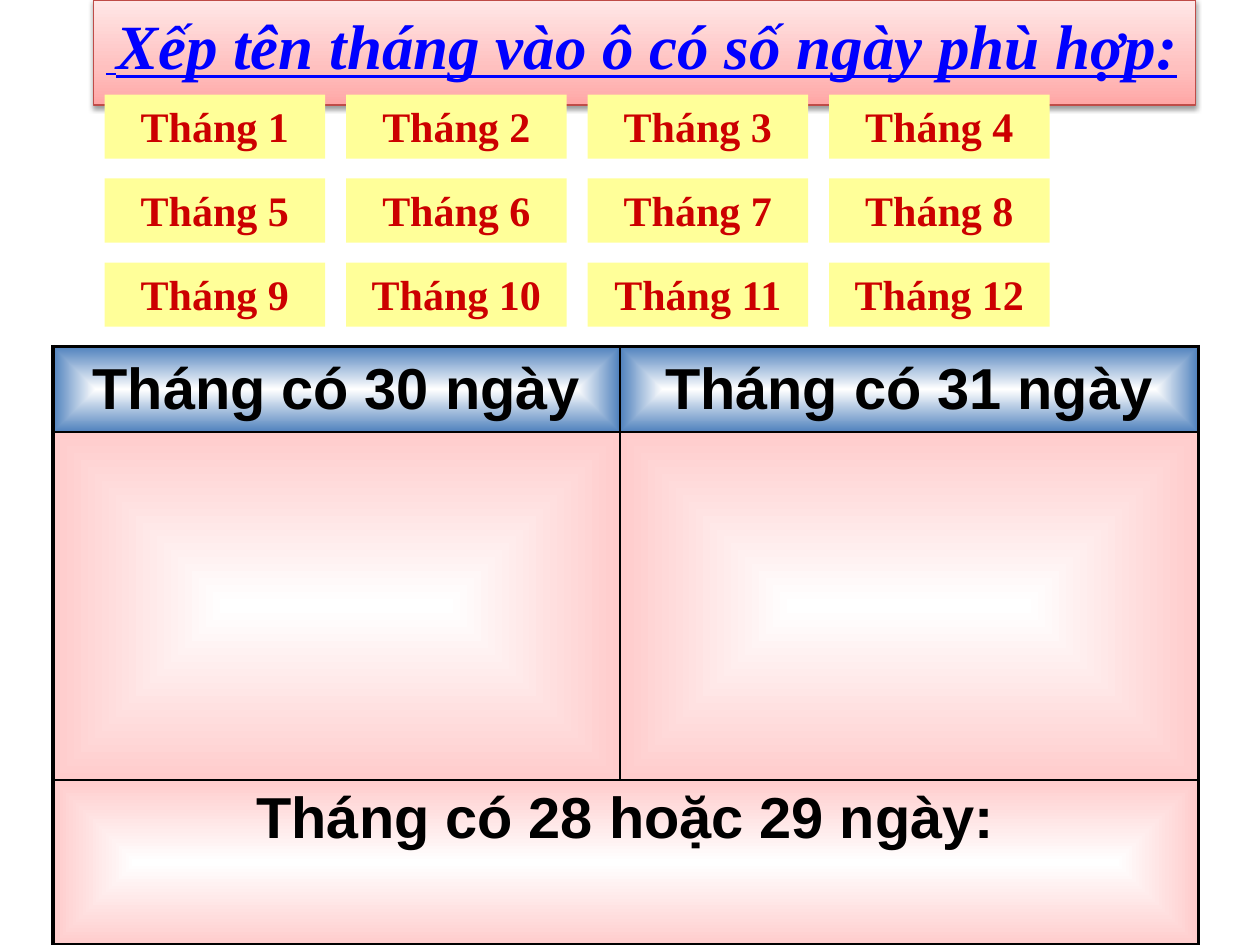
from dataclasses import dataclass

from lxml import etree
from pptx import Presentation
from pptx import util as u
from pptx.dml.color import RGBColor
from pptx.enum import shapes, text
from pptx.oxml.ns import qn


@dataclass(frozen=True)
class Theme:
    """Colours, fonts and type sizes of the slide."""
    serif: str = "Times New Roman"
    sans: str = "Arial"
    blue: str = "0000FF"
    red: str = "CC0000"
    black: str = "000000"
    yellow: str = "FFFF99"
    title_line: str = "BF4C48"
    title_stops: tuple = ((0, "FFA6A5"), (35, "FFC0BF"), (100, "FFE7E7"))
    head_stops: tuple = ((0, "FFFFFF"), (100, "4F81BD"))
    body_stops: tuple = ((0, "FFFFFF"), (100, "FFCCCC"))
    title_size: int = 36
    head_size: int = 33
    label_size: int = 24
    outer: float = 2.25
    inner: float = 1


def sub(parent, tag, **attrs):
    """Append a DrawingML child with the given attributes."""
    return etree.SubElement(parent, qn(f"a:{tag}"), {k: str(v) for k, v in attrs.items()})


def add_text(p, content, *, size, font, color, italic=False, underline=False,
             align=text.PP_ALIGN.CENTER, before=0):
    """Add a bold run to a paragraph, with space before in percent of a line."""
    p.alignment = align
    if before:
        p.space_before = u.Pt(0)
        spacing = p._p.pPr.find(qn("a:spcBef"))
        spacing.clear()
        sub(spacing, "spcPct", val=before * 1000)
    r = p.add_run()
    r.text = content
    f = r.font
    f.size, f.name, f.bold = u.Pt(size), font, True
    f.italic, f.underline = italic, underline
    f.color.rgb = RGBColor.from_string(color)


def fill_gradient(fill, props, stops, angle=None):
    """Fill with colour stops, linear at an angle or else from the centre."""
    fill.gradient()
    grad = props.find(qn("a:gradFill"))
    grad.clear()
    grad.set("rotWithShape", "1")
    stop_list = sub(grad, "gsLst")
    for pos, color in stops:
        sub(sub(stop_list, "gs", pos=pos * 1000), "srgbClr", val=color)
    if angle is None:
        sub(sub(grad, "path", path="shape"), "fillToRect", l=50000, t=50000, r=50000, b=50000)
    else:
        sub(grad, "lin", ang=angle * 60000, scaled=1)


class Board:
    """Holds the theme and the current slide."""

    def __init__(self, slide, theme):
        """Keep the slide and the theme."""
        self.s, self.t = slide, theme

    def title(self, content, left, top, width, height):
        """Format the title placeholder as a shaded banner."""
        t, sp = self.t, self.s.shapes.title
        sp.left, sp.top = u.Inches(left), u.Inches(top)
        sp.width, sp.height = u.Inches(width), u.Inches(height)
        props = sp._element.spPr
        fill_gradient(sp.fill, props, t.title_stops, angle=270)
        sp.line.color.rgb = RGBColor.from_string(t.title_line)
        sp.line.width = u.Pt(0.75)
        shadow = sub(sub(props, "effectLst"), "outerShdw", blurRad=u.Pt(3.1),
                     dist=u.Pt(1.6), dir=90 * 60000, rotWithShape=0)
        sub(sub(shadow, "srgbClr", val=t.black), "alpha", val=38000)
        tf = sp.text_frame
        tf.word_wrap = True
        tf.auto_size = text.MSO_AUTO_SIZE.SHAPE_TO_FIT_TEXT
        tf.vertical_anchor = text.MSO_ANCHOR.TOP
        for part, size in ((" ", t.label_size), (content, t.title_size)):
            add_text(tf.paragraphs[0], part, size=size, font=t.serif, color=t.blue,
                     italic=True, underline=True, align=text.PP_ALIGN.LEFT)

    def label(self, content, left, top, width, height):
        """Add a month card."""
        t = self.t
        sp = self.s.shapes.add_shape(shapes.MSO_SHAPE.RECTANGLE, u.Inches(left),
                                     u.Inches(top), u.Inches(width), u.Inches(height))
        sp.shadow.inherit = False
        sp.fill.solid()
        sp.fill.fore_color.rgb = RGBColor.from_string(t.yellow)
        sp.line.fill.background()
        tf = sp.text_frame
        tf.word_wrap = True
        tf.auto_size = text.MSO_AUTO_SIZE.SHAPE_TO_FIT_TEXT
        tf.vertical_anchor = text.MSO_ANCHOR.TOP
        add_text(tf.paragraphs[0], content, size=t.label_size, font=t.serif,
                 color=t.red, before=50)

    def borders(self, cell, edges):
        """Draw the left, right, top and bottom cell borders."""
        props = cell._tc.get_or_add_tcPr()
        for i, (side, is_outer) in enumerate(zip("LRTB", edges)):
            width = self.t.outer if is_outer else self.t.inner
            ln = sub(props, f"ln{side}", w=u.Pt(width))
            sub(sub(ln, "solidFill"), "srgbClr", val=self.t.black)
            props.insert(i, ln)

    def table(self, rows, left, top, widths, heights):
        """Add the sorting table, its last row merged across."""
        t = self.t
        last_row, last_col = len(heights) - 1, len(widths) - 1
        table = self.s.shapes.add_table(
            len(heights), len(widths), u.Inches(left), u.Inches(top),
            u.Inches(sum(widths)), u.Inches(sum(heights))).table
        table.first_row = table.horz_banding = False
        for col, width in zip(table.columns, widths):
            col.width = u.Inches(width)
        for row, height in zip(table.rows, heights):
            row.height = u.Inches(height)
        table.cell(last_row, 0).merge(table.cell(last_row, last_col))
        for i, row in enumerate(rows):
            for j, content in enumerate(row):
                cell = table.cell(i, j)
                stops = t.body_stops if i else t.head_stops
                fill_gradient(cell.fill, cell._tc.get_or_add_tcPr(), stops)
                is_right = j == last_col or cell.is_merge_origin
                self.borders(cell, (j == 0, is_right, i == 0, i == last_row))
                if i == 0:
                    cell.vertical_anchor = text.MSO_ANCHOR.MIDDLE
                if content:
                    add_text(cell.text_frame.paragraphs[0], content, size=t.head_size,
                             font=t.sans, color=t.black, before=20)


def main():
    """Build the month sorting slide."""
    prs = Presentation()
    prs.slide_width, prs.slide_height = u.Inches(10), u.Inches(7.5)
    board = Board(prs.slides.add_slide(prs.slide_layouts[5]), Theme())
    board.title("Xếp tên tháng vào ô có số ngày phù hợp:", 0.74, 0, 8.75, 0.71)
    board.table([["Tháng có 30 ngày", "Tháng có 31 ngày"],
                 ["", ""],
                 ["Tháng có 28 hoặc 29 ngày:", ""]],
                0.42, 2.75, (4.5, 4.59), (0.68, 2.76, 1.31))
    for i in range(12):
        row, col = divmod(i, 4)
        board.label(f"Tháng {i + 1}", 0.83 + col * 5.75 / 3, 0.75 + row * 2 / 3, 1.75, 0.51)
    prs.save("out.pptx")


if __name__ == "__main__":
    main()
